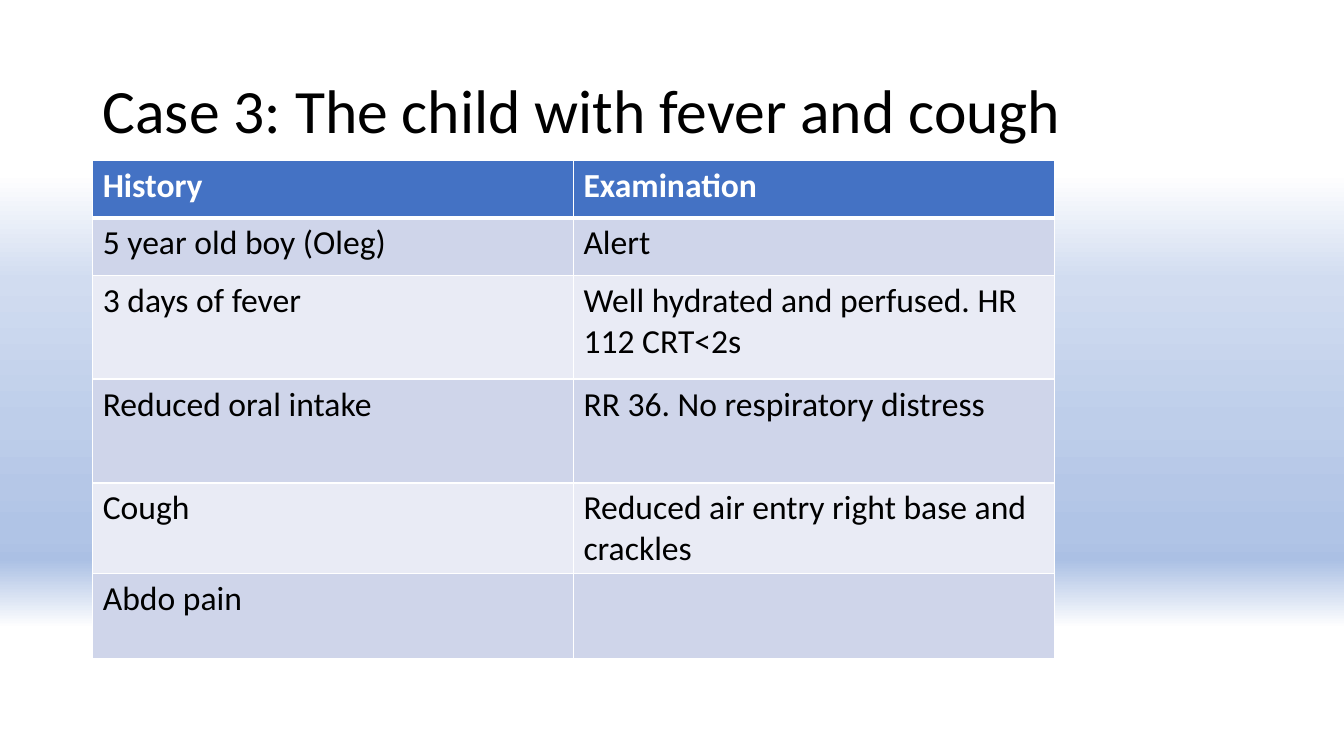
from dataclasses import dataclass

import pptx
import pptx.dml.color
import pptx.enum.text
import pptx.oxml
import pptx.oxml.ns
import pptx.util
from lxml import etree

Pt = pptx.util.Pt


@dataclass(frozen=True)
class Theme:
    """Colours, font and type sizes."""

    font: str = "Calibri"
    black: str = "000000"
    white: str = "FFFFFF"
    head: str = "4472C4"
    bands: tuple[str, str] = ("CFD5EA", "E9EBF5")
    title: float = 44
    body: float = 24
    thin: float = 1
    thick: float = 3


@dataclass(frozen=True)
class Stop:
    """A gradient stop, placed in percent."""

    pos: int
    color: str


@dataclass(frozen=True)
class Row:
    """A table row with its height in points."""

    high: float
    left: str
    right: str


LOOK = Theme()
STOPS = [
    Stop(23, "FFFFFF"), Stop(37, "D1DCF0"), Stop(56, "BECEEA"),
    Stop(65, "B5C7E7"), Stop(69, "B0C4E6"), Stop(72, "AEC2E5"),
    Stop(73, "ADC1E5"), Stop(73, "ABC0E4"), Stop(74, "ABC0E4"),
    Stop(83, "FFFFFF"),
]
ROWS = [
    Row(41, "History", "Examination"),
    Row(41, "5 year old boy (Oleg)", "Alert"),
    Row(74.2, "3 days of fever", "Well hydrated and perfused. HR 112 CRT<2s"),
    Row(74.2, "Reduced oral intake", "RR 36. No respiratory distress"),
    Row(60.5, "Cough", "Reduced air entry right base and crackles"),
    Row(60.5, "Abdo pain", ""),
]
LEFT = 66.24
WIDE = 343.4


def rgb(code: str) -> pptx.dml.color.RGBColor:
    """Turn a hex code into a colour."""
    return pptx.dml.color.RGBColor.from_string(code)


def write(para, text: str, size: float, color: str, bold: bool = False) -> None:
    """Add one styled run to a paragraph."""
    run = para.add_run()
    run.text = text
    run.font.name = LOOK.font
    run.font.size = Pt(size)
    run.font.bold = bold
    run.font.color.rgb = rgb(color)


def shade(slide) -> None:
    """Fill the background with the vertical gradient."""
    fill = slide.background.fill
    fill.gradient()
    fill.gradient_angle = 270
    stops = slide.element.find(".//" + pptx.oxml.ns.qn("a:gsLst"))
    for old in list(stops):
        stops.remove(old)
    for stop in STOPS:
        node = etree.SubElement(
            stops, pptx.oxml.ns.qn("a:gs"), pos=str(stop.pos * 1000))
        etree.SubElement(node, pptx.oxml.ns.qn("a:srgbClr"), val=stop.color)


def edge(cell, side: str, width: float) -> None:
    """Draw a white border on one side of a cell."""
    space = pptx.oxml.ns.nsdecls("a")
    cell._tc.get_or_add_tcPr().append(pptx.oxml.parse_xml(
        f'<a:ln{side} {space} w="{Pt(width)}"><a:solidFill>'
        f'<a:srgbClr val="{LOOK.white}"/></a:solidFill></a:ln{side}>'))


def title(slide, text: str) -> None:
    """Add the slide title."""
    box = slide.shapes.add_textbox(Pt(LEFT), Pt(28.8), Pt(702), Pt(104.4))
    frame = box.text_frame
    frame.word_wrap = True
    frame.vertical_anchor = pptx.enum.text.MSO_ANCHOR.MIDDLE
    para = frame.paragraphs[0]
    para.line_spacing = 0.9
    write(para, text, LOOK.title, LOOK.black)


def paint(cell, text: str, line: int) -> None:
    """Style and fill one table cell."""
    head = line == 0
    for side in "LRTB":
        heavy = (head and side == "B") or (line == 1 and side == "T")
        edge(cell, side, LOOK.thick if heavy else LOOK.thin)
    cell.fill.solid()
    cell.fill.fore_color.rgb = rgb(
        LOOK.head if head else LOOK.bands[(line - 1) % 2])
    if text:
        write(cell.text_frame.paragraphs[0], text, LOOK.body,
              LOOK.white if head else LOOK.black, head)


def grid(slide, rows: list[Row]) -> None:
    """Add the table of findings."""
    high = sum(row.high for row in rows)
    table = slide.shapes.add_table(
        len(rows), 2, Pt(LEFT), Pt(114.6), Pt(2 * WIDE), Pt(high)).table
    for col in table.columns:
        col.width = Pt(WIDE)
    for line, row in enumerate(rows):
        table.rows[line].height = Pt(row.high)
        for col, text in enumerate((row.left, row.right)):
            paint(table.cell(line, col), text, line)


def main() -> None:
    """Build and save the slide."""
    deck = pptx.Presentation()
    deck.slide_width, deck.slide_height = Pt(960), Pt(540)
    slide = deck.slides.add_slide(deck.slide_layouts[6])
    shade(slide)
    title(slide, "Case 3: The child with fever and cough")
    grid(slide, ROWS)
    deck.save("out.pptx")


if __name__ == "__main__":
    main()
